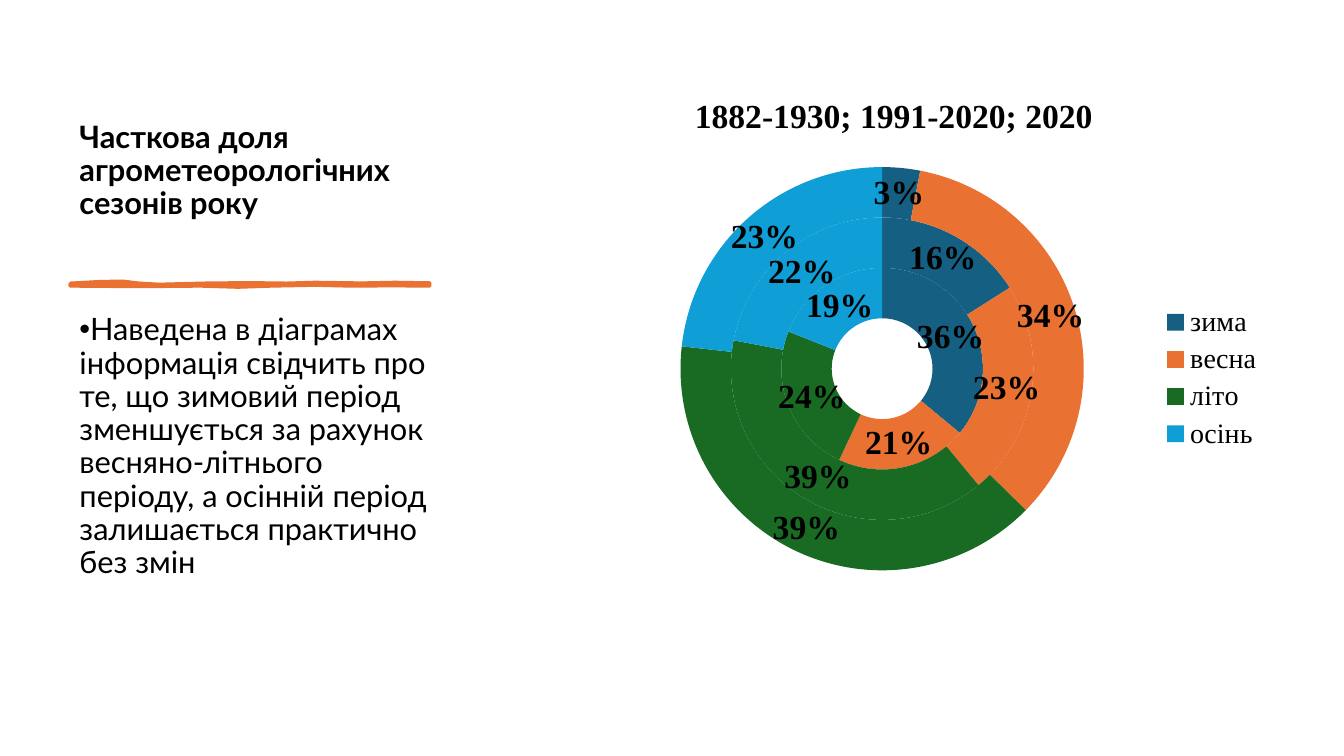
from pptx import Presentation
from pptx.chart.data import CategoryChartData
from pptx.dml.color import RGBColor
from pptx.enum.chart import XL_CHART_TYPE as CT, XL_LEGEND_POSITION as LP
from pptx.enum.text import MSO_ANCHOR
from pptx.oxml import parse_xml
from pptx.oxml.ns import nsdecls, qn
from pptx.util import Pt
from lxml.etree import SubElement

COLORS = {
    "text": "000000",
    "accent": "E97132",
    "зима": "156082",
    "весна": "E97132",
    "літо": "196B24",
    "осінь": "0F9ED5",
}
BODY_FONT = "Lato"
CHART_FONT = "Times New Roman"
PERIODS = {
    "1882-1930": (36, 21, 24, 19),
    "1991-2020": (16, 23, 39, 22),
    "2020": (3, 34, 39, 23),
}
SEASONS = ("зима", "весна", "літо", "осінь")
STROKE_TOP = [(50.4, 202.6), (72, 201.4), (88, 201.2), (99.4, 202.6), (114, 203.4),
              (150.5, 202.5), (180, 202.3), (204.5, 202.6), (225, 202), (258.5, 202.5),
              (282, 202), (306.7, 202.4)]
STROKE_BOTTOM = [(306.7, 204), (280, 203.8), (250.6, 204), (225, 203.4), (194.4, 204),
                 (170, 204.8), (143.3, 204), (100, 204.4), (50.4, 204)]


def rgb(name):
    return RGBColor.from_string(COLORS[name])


def style_font(font, name, size, bold=False):
    font.name, font.size, font.bold = name, Pt(size), bold
    font.color.rgb = rgb("text")


def add_text(s, box, text, bold=False, anchor=MSO_ANCHOR.TOP, bottom=3.6, bullet=False):
    tf = s.shapes.add_textbox(*map(Pt, box)).text_frame
    tf.word_wrap = True
    tf.vertical_anchor = anchor
    tf.margin_bottom = Pt(bottom)
    p = tf.paragraphs[0]
    p.line_spacing = 0.9
    if bullet:
        p.space_after = Pt(6)
        pPr = p._p.get_or_add_pPr()
        pPr.set("marL", "0")
        pPr.set("indent", str(-Pt(18)))
        SubElement(pPr, qn("a:buFont")).set("typeface", "Arial")
        SubElement(pPr, qn("a:buChar")).set("char", "•")
    r = p.add_run()
    r.text = text
    style_font(r.font, BODY_FONT, 22, bold)


def add_brush_stroke(s, points):
    start, *rest = [(Pt(x), Pt(y)) for x, y in points]
    builder = s.shapes.build_freeform(*start)
    builder.add_line_segments(rest, close=True)
    sp = builder.convert_to_shape()
    sp.shadow.inherit = False
    sp.fill.solid()
    sp.fill.fore_color.rgb = rgb("accent")
    sp.line.color.rgb = rgb("accent")
    sp.line.width = Pt(3)
    SubElement(sp.line._get_or_add_ln(), qn("a:round"))


def set_plot_layout(chart, x, y, w, h):
    area = chart.element.find(".//" + qn("c:plotArea"))
    for old in area.findall(qn("c:layout")):
        area.remove(old)
    area.insert(0, parse_xml(
        f'<c:layout {nsdecls("c")}><c:manualLayout><c:layoutTarget val="inner"/>'
        '<c:xMode val="edge"/><c:yMode val="edge"/>'
        f'<c:x val="{x}"/><c:y val="{y}"/><c:w val="{w}"/><c:h val="{h}"/>'
        '</c:manualLayout></c:layout>'))


def add_season_chart(s, box):
    data = CategoryChartData()
    data.categories = SEASONS
    for period, shares in PERIODS.items():
        data.add_series(period, shares)
    chart = s.shapes.add_chart(CT.DOUGHNUT, *map(Pt, box), data).chart
    style_font(chart.font, CHART_FONT, 20)
    chart.has_title = True
    r = chart.chart_title.text_frame.paragraphs[0].add_run()
    r.text = "; ".join(PERIODS)
    style_font(r.font, CHART_FONT, 24, True)
    chart.has_legend = True
    chart.legend.position = LP.RIGHT
    chart.legend.include_in_layout = False
    style_font(chart.legend.font, CHART_FONT, 20)
    plot = chart.plots[0]
    plot.vary_by_categories = True
    for series in plot.series:
        for i, season in enumerate(SEASONS):
            fmt = series.points[i].format
            fmt.fill.solid()
            fmt.fill.fore_color.rgb = rgb(season)
            fmt.line.fill.background()
        labels = series.data_labels
        labels.show_percentage = True
        labels.show_value = False
        labels.number_format = "0%"
        labels.number_format_is_linked = False
        style_font(labels.font, CHART_FONT, 24, True)
    set_plot_layout(chart, 0.22, 0.1, 0.53, 0.77)


def main():
    prs = Presentation()
    prs.slide_width, prs.slide_height = Pt(960), Pt(540)
    s = prs.slides.add_slide(prs.slide_layouts[6])
    add_text(s, (49.7, 50.4, 270, 135.4), "Часткова доля агрометеорологічних сезонів року",
             bold=True, anchor=MSO_ANCHOR.BOTTOM, bottom=27.6)
    add_brush_stroke(s, STROKE_TOP + STROKE_BOTTOM)
    add_text(s, (49.7, 221, 270, 268.6),
             "Наведена в діаграмах інформація свідчить про те, що зимовий період "
             "зменшується за рахунок весняно-літнього періоду, а осінній період "
             "залишається практично без змін", bullet=True)
    add_season_chart(s, (366.5, 50.4, 543.6, 439.2))
    prs.save("out.pptx")


if __name__ == "__main__":
    main()
